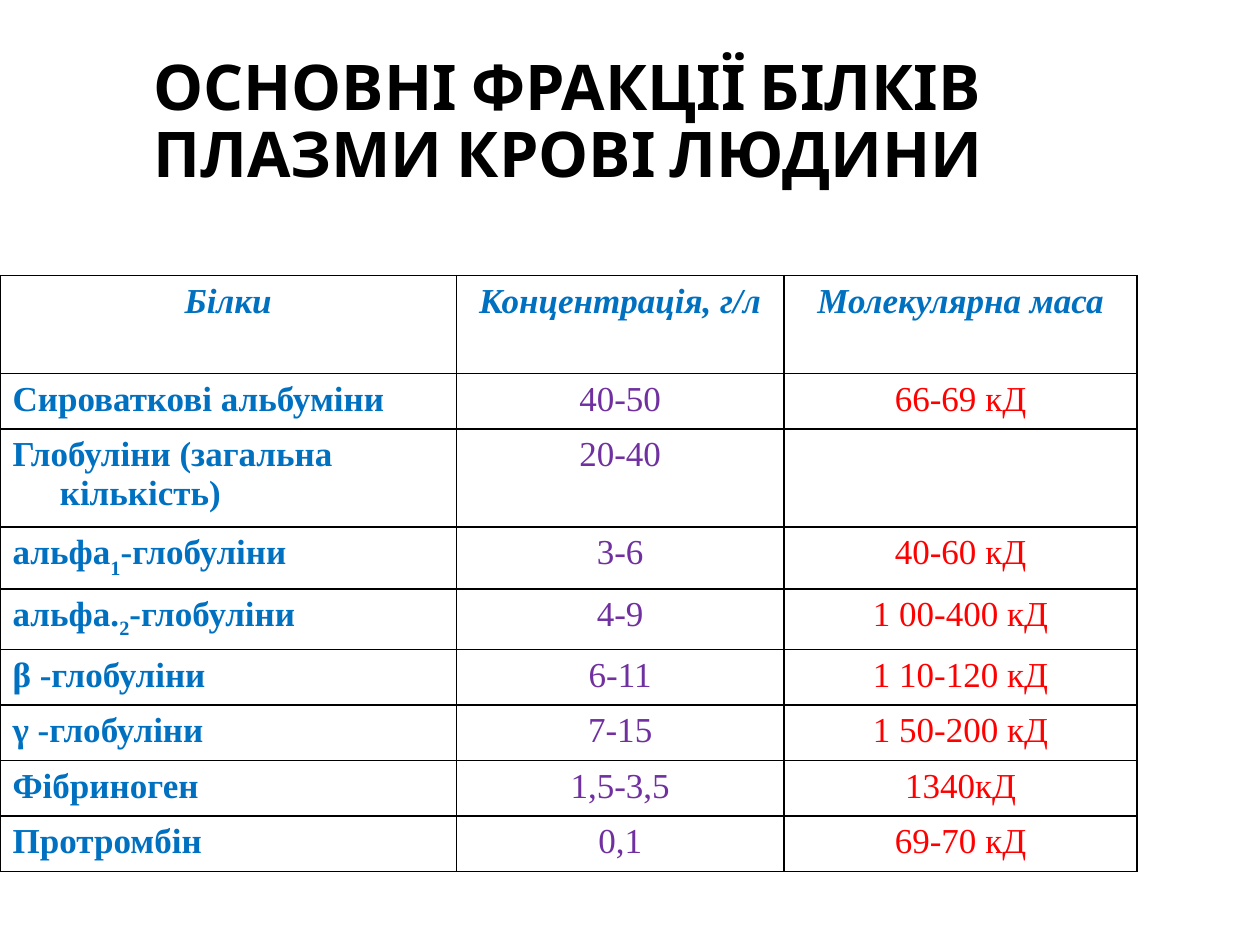
from lxml.etree import SubElement
from pptx import Presentation
from pptx.dml.color import RGBColor
from pptx.enum.text import MSO_ANCHOR, PP_ALIGN
from pptx.oxml.ns import qn
from pptx.util import Pt

TITLE = "ОСНОВНІ ФРАКЦІЇ БІЛКІВ ПЛАЗМИ КРОВІ ЛЮДИНИ"
HEADERS = ("Білки", "Концентрація, г/л", "Молекулярна маса")
# A protein name is a list of (text, baseline shift in thousandths of a percent)
PROTEINS = [
    ([("Сироваткові альбуміни", 0)], "40-50", "66-69 кД"),
    ([("Глобуліни (загальна кількість)", 0)], "20-40", ""),
    ([("альфа", 0), ("1", -30000), ("-глобуліни", 0)], "3-6", "40-60 кД"),
    ([("альфа.", 0), ("2", -25000), ("-глобуліни", 0)], "4-9", "1 00-400 кД"),
    ([("β -глобуліни", 0)], "6-11", "1 10-120 кД"),
    ([("γ -глобуліни", 0)], "7-15", "1 50-200 кД"),
    ([("Фібриноген", 0)], "1,5-3,5", "1340кД"),
    ([("Протромбін", 0)], "0,1", "69-70 кД"),
]
BLUE, PURPLE, RED, BLACK, WHITE = "0070C0", "7030A0", "FF0000", "000000", "FFFFFF"
COLUMN_WIDTHS = (260.8, 187.2, 201.8)
ROW_HEIGHT, TALL_ROW_HEIGHT = 31.7, 56
TALL_ROWS = (0, 2)
TABLE_TOP = 157.5
INDENT = 27


def color(value):
    return RGBColor.from_string(value)


def style_font(font, name, size, value, bold=False, italic=False):
    font.name, font.size = name, Pt(size)
    font.bold, font.italic = bold, italic
    font.color.rgb = color(value)


def add_borders(cell):
    properties = cell._tc.get_or_add_tcPr()
    for index, side in enumerate(("lnL", "lnR", "lnT", "lnB")):
        line = properties.makeelement(qn(f"a:{side}"), {"w": str(Pt(1))})
        fill = SubElement(line, qn("a:solidFill"))
        SubElement(fill, qn("a:srgbClr"), val=BLACK)
        properties.insert(index, line)


def fill_cell(cell, parts, value, align, bold=False, italic=False):
    cell.fill.background()
    add_borders(cell)
    paragraph = cell.text_frame.paragraphs[0]
    paragraph.alignment = align
    properties = paragraph._p.get_or_add_pPr()
    properties.set("marL", str(Pt(INDENT)))
    properties.set("indent", str(-Pt(INDENT)))
    style_font(paragraph.font, "Times New Roman", 20, value, bold, italic)
    for text, baseline in parts:
        run = paragraph.add_run()
        run.text = text
        style_font(run.font, "Times New Roman", 20, value, bold, italic)
        if baseline:
            run.font._element.set("baseline", str(baseline))


def add_title(slide):
    box = slide.shapes.add_textbox(Pt(84), Pt(24), Pt(594), Pt(85))
    box.fill.solid()
    box.fill.fore_color.rgb = color(WHITE)
    frame = box.text_frame
    frame.word_wrap = True
    frame.vertical_anchor = MSO_ANCHOR.BOTTOM
    frame.margin_left = frame.margin_right = Pt(3.6)
    frame.margin_top = frame.margin_bottom = 0
    frame.text = TITLE
    paragraph = frame.paragraphs[0]
    paragraph.line_spacing = 0.88
    style_font(paragraph.runs[0].font, "Cabin", 36, BLACK, bold=True)


def add_protein_table(slide):
    heights = [TALL_ROW_HEIGHT if row in TALL_ROWS else ROW_HEIGHT
               for row in range(len(PROTEINS) + 1)]
    table = slide.shapes.add_table(
        len(heights), len(COLUMN_WIDTHS), 0, Pt(TABLE_TOP),
        Pt(sum(COLUMN_WIDTHS)), Pt(sum(heights))).table
    table.horz_banding = False
    for column, width in zip(table.columns, COLUMN_WIDTHS):
        column.width = Pt(width)
    for row, height in zip(table.rows, heights):
        row.height = Pt(height)

    for column, header in enumerate(HEADERS):
        fill_cell(table.cell(0, column), [(header, 0)], BLUE,
                  PP_ALIGN.CENTER, bold=True, italic=True)
    for row, (name, concentration, mass) in enumerate(PROTEINS, start=1):
        fill_cell(table.cell(row, 0), name, BLUE, PP_ALIGN.LEFT, bold=True)
        for column, text, value in ((1, concentration, PURPLE), (2, mass, RED)):
            parts = [(text, 0)] if text else []
            fill_cell(table.cell(row, column), parts, value, PP_ALIGN.CENTER)


def main():
    presentation = Presentation()
    presentation.slide_width, presentation.slide_height = Pt(720), Pt(540)
    slide = presentation.slides.add_slide(presentation.slide_layouts[6])
    add_title(slide)
    add_protein_table(slide)
    presentation.save("out.pptx")


if __name__ == "__main__":
    main()
